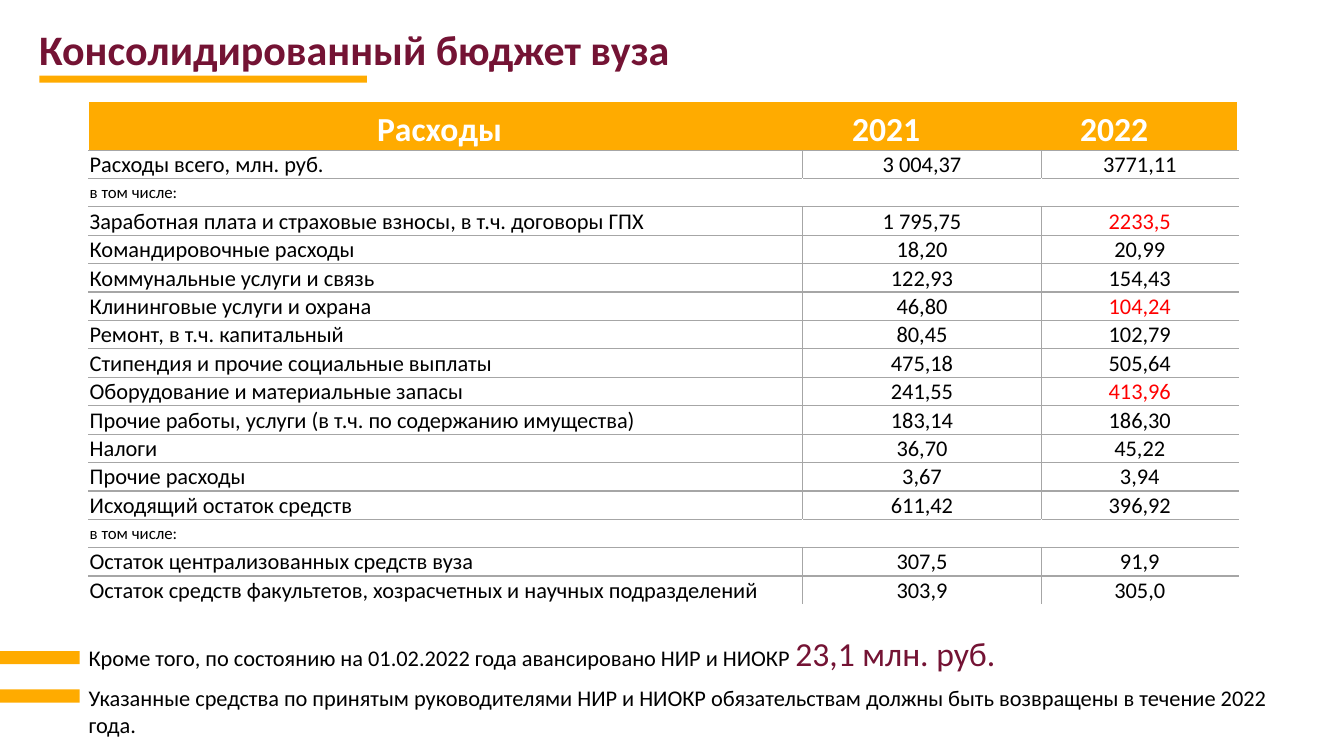
"""Build a slide with a university's consolidated budget of expenses."""
from lxml import etree
from pptx import Presentation
from pptx import util as u
from pptx.dml.color import RGBColor
from pptx.enum import shapes, text
from pptx.oxml import ns

COLORS = {"accent": "FFAB00", "title": "741334", "ink": "000000",
          "alert": "FF0000", "rule": "A6A6A6", "paper": "FFFFFF"}
GRID = u.Inches(0.1)
EXPENSES = [
    ("Расходы всего, млн. руб.", "3 004,37", "3771,11"),
    ("в том числе:", "", ""),
    ("Заработная плата и страховые взносы, в т.ч. договоры ГПХ", "1 795,75", "2233,5"),
    ("Командировочные расходы", "18,20", "20,99"),
    ("Коммунальные услуги и связь", "122,93", "154,43"),
    ("Клининговые услуги и охрана", "46,80", "104,24"),
    ("Ремонт, в т.ч. капитальный", "80,45", "102,79"),
    ("Стипендия и прочие социальные выплаты", "475,18", "505,64"),
    ("Оборудование и материальные запасы", "241,55", "413,96"),
    ("Прочие работы, услуги (в т.ч. по содержанию имущества)", "183,14", "186,30"),
    ("Налоги", "36,70", "45,22"),
    ("Прочие расходы", "3,67", "3,94"),
    ("Исходящий остаток средств", "611,42", "396,92"),
    ("в том числе:", "", ""),
    ("Остаток централизованных средств вуза", "307,5", "91,9"),
    ("Остаток средств факультетов, хозрасчетных и научных подразделений", "303,9", "305,0"),
]
HIGHLIGHTED = {"2233,5", "104,24", "413,96"}
HEADER = "\tРасходы\t2021\t2022"
HEADER_STOPS = [34.7, 79, 101.6]
COLUMN_WIDTHS = [70.8, 23.7, 19.5]
HEADER_HEIGHT, ROW_HEIGHT = 4.8, 2.8


def add_run(paragraph, words, size, color, bold=False):
    run = paragraph.add_run()
    run.text = words
    for name, value in {"name": "Calibri", "size": u.Pt(size), "bold": bold}.items():
        setattr(run.font, name, value)
    run.font.color.rgb = RGBColor.from_string(COLORS[color])


def set_borders(cell, left, top, right, bottom):
    properties = cell._tc.get_or_add_tcPr()
    sides = zip(("a:lnL", "a:lnR", "a:lnT", "a:lnB"), (left, right, top, bottom))
    for index, (tag, color) in enumerate(sides):
        line = etree.Element(ns.qn(tag), w=str(u.Pt(1)))
        fill = etree.SubElement(line, ns.qn("a:solidFill"))
        etree.SubElement(fill, ns.qn("a:srgbClr"), val=COLORS[color])
        properties.insert(index, line)


presentation = Presentation()
presentation.slide_width, presentation.slide_height = u.Inches(13.33), u.Inches(7.5)
slide = presentation.slides.add_slide(presentation.slide_layouts[6])

row_heights = [HEADER_HEIGHT] + [ROW_HEIGHT] * len(EXPENSES)
table_box = [int(part * GRID) for part in (8.8, 10.1, sum(COLUMN_WIDTHS), sum(row_heights))]
table = slide.shapes.add_table(len(row_heights), len(COLUMN_WIDTHS), *table_box).table
table.first_row = table.horz_banding = False
for column, width in zip(table.columns, COLUMN_WIDTHS):
    column.width = int(width * GRID)
for row, height in zip(table.rows, row_heights):
    row.height = int(height * GRID)
cell_format = {"margin_left": u.Inches(0.01), "margin_top": u.Inches(0.01),
               "margin_right": u.Inches(0.01), "margin_bottom": 0,
               "vertical_anchor": text.MSO_ANCHOR.MIDDLE}
for cell in table.iter_cells():
    for name, value in cell_format.items():
        setattr(cell, name, value)

header = table.cell(0, 0)
header.merge(table.cell(0, 2))
header.vertical_anchor = text.MSO_ANCHOR.BOTTOM
header_paragraph = header.text_frame.paragraphs[0]
add_run(header_paragraph, HEADER, 24, "paper", True)
tabs = etree.SubElement(header_paragraph._p.get_or_add_pPr(), ns.qn("a:tabLst"))
for stop in HEADER_STOPS:
    etree.SubElement(tabs, ns.qn("a:tab"), pos=str(int(stop * GRID)), algn="ctr")
for column in range(3):
    cell = table.cell(0, column)
    cell.fill.solid()
    cell.fill.fore_color.rgb = RGBColor.from_string(COLORS["accent"])
    set_borders(cell, "paper", "paper", "paper", "rule")

for row, values in enumerate(EXPENSES, 1):
    is_subheading = not values[1]
    inner = "paper" if is_subheading else "rule"
    bottom = "paper" if row == len(EXPENSES) else "rule"
    for column, value in enumerate(values):
        cell = table.cell(row, column)
        cell.fill.background()
        paragraph = cell.text_frame.paragraphs[0]
        paragraph.alignment = text.PP_ALIGN.CENTER if column else text.PP_ALIGN.LEFT
        size = 12 if is_subheading else 16
        if value:
            add_run(paragraph, value, size, "alert" if value in HIGHLIGHTED else "ink")
        else:
            paragraph._p.get_or_add_endParaRPr().set("sz", str(size * 100))
        set_borders(cell, inner if column else "paper", "rule",
                    inner if column < 2 else "paper", bottom)

for box in [(3.9, 7.5, 32.5, 0.7), (0, 64.6, 7.9, 1.3), (0, 68.4, 7.9, 1.3)]:
    bar = slide.shapes.add_shape(shapes.MSO_SHAPE.RECTANGLE,
                                 *[int(part * GRID) for part in box])
    bar.shadow.inherit = False
    bar.fill.solid()
    bar.fill.fore_color.rgb = RGBColor.from_string(COLORS["accent"])
    bar.line.fill.background()

TEXTS = [
    ((2.9, 2.4, 76.4, 5.1), 0.9, [("Консолидированный бюджет вуза", 30, "title", True)]),
    ((7.8, 62.3, 121.2, 5), 1, [
        ("Кроме того, по состоянию на 01.02.2022 года авансировано НИР и НИОКР ", 16, "ink"),
        ("23,1 млн. руб.", 24, "title")]),
    ((7.8, 67.4, 118.9, 6.4), 1, [
        ("Указанные средства по принятым руководителями НИР и НИОКР обязательствам "
         "должны быть возвращены в течение 2022 года.", 16, "ink")]),
]
for box, spacing, runs in TEXTS:
    frame = slide.shapes.add_textbox(*[int(part * GRID) for part in box]).text_frame
    frame.word_wrap = True
    paragraph = frame.paragraphs[0]
    paragraph.line_spacing = spacing
    for run in runs:
        add_run(paragraph, *run)

presentation.save("out.pptx")
